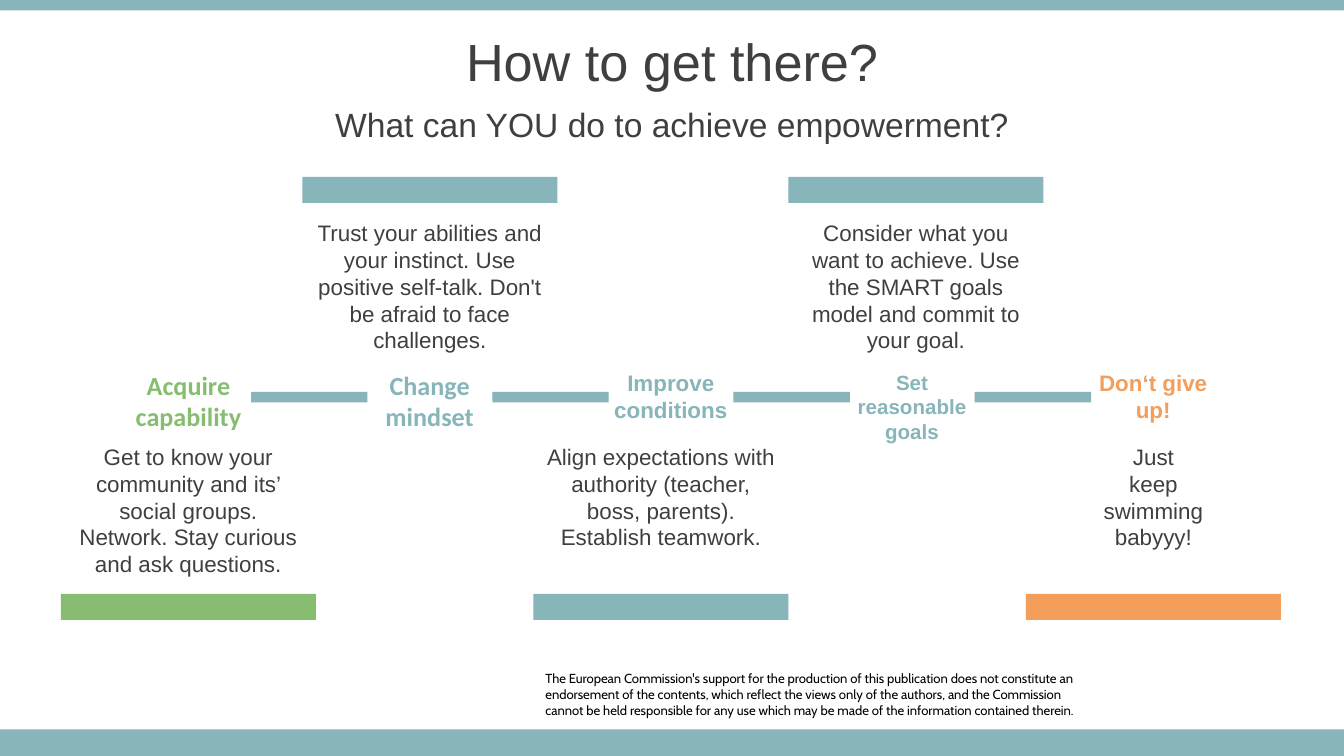
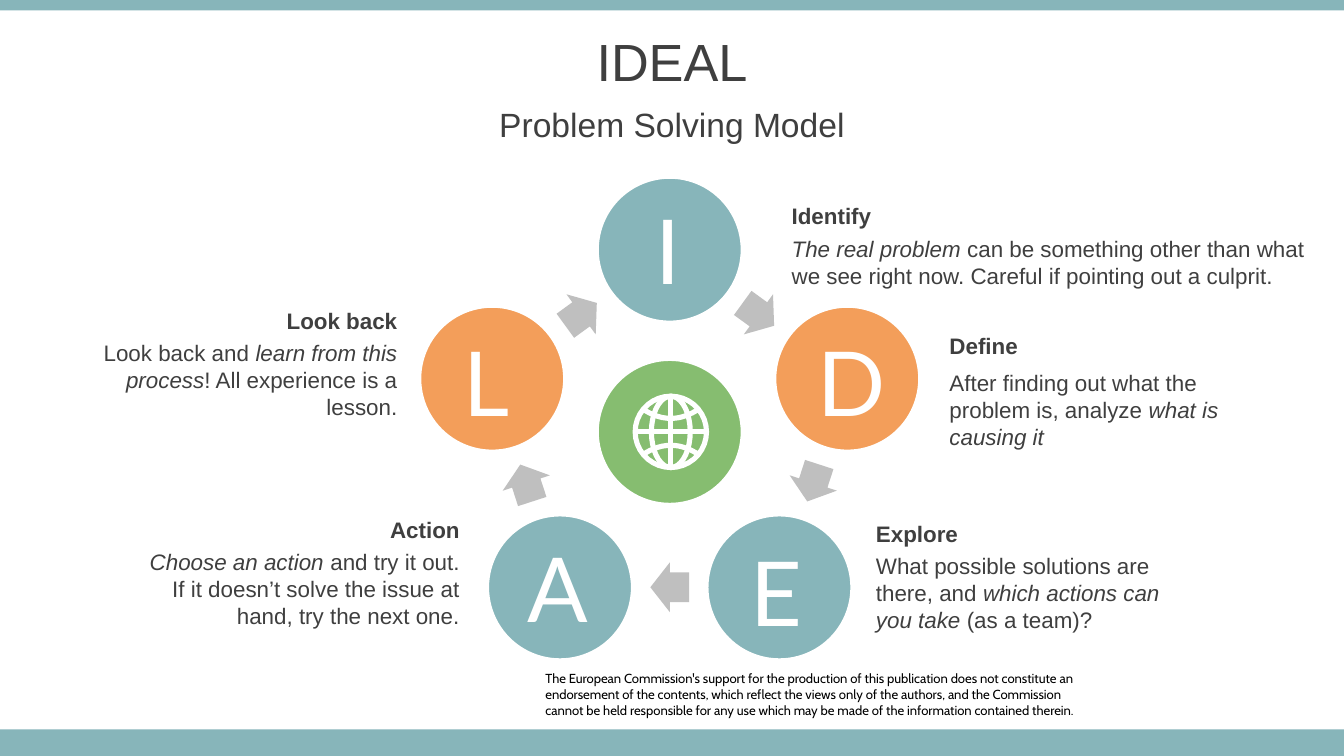
import math

from pptx import Presentation
from pptx.dml.color import RGBColor
from pptx.enum import shapes, text
from pptx.util import Pt

COLORS = {"teal": "87B5BA", "green": "86BD70", "orange": "F39E5A",
          "ink": "3F3F3F", "gray": "BFBFBF", "white": "FFFFFF", "black": "000000"}
WIDTH, HEIGHT = 720, 405
LEFT, CENTER, RIGHT = text.PP_ALIGN.LEFT, text.PP_ALIGN.CENTER, text.PP_ALIGN.RIGHT
RECT, OVAL, ARROW = (shapes.MSO_SHAPE.RECTANGLE, shapes.MSO_SHAPE.OVAL,
                     shapes.MSO_SHAPE.RIGHT_ARROW)

DISCLAIMER = [
    "The European Commission's support for the production of this publication does not "
    "constitute an endorsement of the contents, which reflect the views only of the "
    "authors, and the Commission",
    "cannot be held responsible for any use which may be made of the information "
    "contained therein.",
]


def rgb(color):
    return RGBColor.from_string(COLORS[color])


class Deck:
    """Holds the shared style and the slide being filled."""

    def __init__(self):
        self.prs = Presentation()
        self.prs.slide_width, self.prs.slide_height = Pt(WIDTH), Pt(HEIGHT)
        self.layout = self.prs.slide_layouts[5]
        self.slide = None

    def new_slide(self, title, subtitle):
        first = self.slide is None
        self.slide = self.prs.slides.add_slide(self.layout)
        if first:
            self.add_frame()
        heading = self.slide.shapes.title
        heading.left, heading.top = Pt(0), Pt(10)
        heading.width, heading.height = Pt(WIDTH), Pt(45.4)
        self.set_text(heading.text_frame, [title], 28, align=CENTER, middle=True)
        self.label((0, 55.4, WIDTH, 22.3), [subtitle], 18, align=CENTER, middle=True)

    def add_frame(self):
        """Put the bands and the disclaimer on the layout, behind every slide."""
        frame = [
            self.label((292.2, 359.4, 300.4, 25.2), DISCLAIMER, 7, "black", "Cabin", inset=0),
            self.shape(RECT, (0, 390.8, WIDTH, HEIGHT - 390.8), "teal"),
            self.shape(RECT, (0, 0, WIDTH, 5.6), "teal"),
        ]
        for number, part in enumerate(frame, 100):
            part.element.xpath(".//p:cNvPr")[0].set("id", str(number))
            self.layout.shapes.element.append(part.element)

    def set_text(self, frame, lines, size, color="ink", font="Arial", align=LEFT,
                 bold=False, inset=None, middle=False):
        """Fill a text frame, one paragraph a line; underscores enclose italics."""
        frame.word_wrap = True
        frame.auto_size = (text.MSO_AUTO_SIZE.NONE if middle
                           else text.MSO_AUTO_SIZE.SHAPE_TO_FIT_TEXT)
        frame.vertical_anchor = text.MSO_ANCHOR.MIDDLE if middle else text.MSO_ANCHOR.TOP
        across, down = (7.2, 3.6) if inset is None else (inset, inset)
        frame.margin_left = frame.margin_right = Pt(across)
        frame.margin_top = frame.margin_bottom = Pt(down)
        for index, line in enumerate(lines):
            paragraph = frame.add_paragraph() if index else frame.paragraphs[0]
            paragraph.alignment = align
            for part, words in enumerate(line.split("_")):
                if words:
                    run = paragraph.add_run()
                    run.text = words
                    run.font.size, run.font.name = Pt(size), font
                    run.font.bold, run.font.italic = bold, part % 2 == 1
                    run.font.color.rgb = rgb(color)

    def label(self, box, lines, size, *args, **style):
        holder = self.slide.shapes.add_textbox(*map(Pt, box))
        self.set_text(holder.text_frame, lines, size, *args, **style)
        return holder

    def shape(self, kind, box, fill, outline=None):
        item = self.slide.shapes.add_shape(kind, *map(Pt, box))
        item.shadow.inherit = False
        item.fill.solid()
        item.fill.fore_color.rgb = rgb(fill)
        if outline:
            item.line.color.rgb = rgb(outline)
            item.line.width = Pt(2)
        else:
            item.line.fill.background()
        return item

    def disc(self, x, y, fill):
        size = 78
        self.shape(OVAL, (x - size / 2, y - size / 2, size, size), fill, "white")

    def arrow(self, x, y, angle):
        width, height = 20.8, 26.6
        arrow = self.shape(ARROW, (x - width / 2, y - height / 2, width, height), "gray")
        arrow.adjustments[0], arrow.adjustments[1] = 0.6, 0.5
        arrow.rotation = angle

    def strokes(self, curves, color, weight):
        """Draw several open or closed curves as one outline."""
        points = [[(Pt(x), Pt(y)) for x, y in curve] for curve in curves]
        builder = self.slide.shapes.build_freeform(*points[0][0])
        builder.add_line_segments(points[0][1:], close=False)
        for curve in points[1:]:
            builder.move_to(*curve[0])
            builder.add_line_segments(curve[1:], close=False)
        item = builder.convert_to_shape()
        item.shadow.inherit = False
        item.fill.background()
        item.line.color.rgb = rgb(color)
        item.line.width = Pt(weight)


def steps_slide(deck):
    deck.new_slide("How to get there?", "What can YOU do to achieve empowerment?")
    # name, font, size, name box width, color, detail left, detail is above, detail
    steps = [
        (["Acquire", "capability"], "Calibri", 14, 73, "green", 32.6, False,
         ["Get to know your community and its’ social groups. Network. "
          "Stay curious and ask questions."]),
        (["Change", "mindset"], "Calibri", 14, 73, "teal", 162, True,
         ["Trust your abilities and your instinct. Use",
          "positive self-talk. Don't be afraid to face", "challenges."]),
        (["Improve conditions"], "Arial", 12, 92, "teal", 285.8, False,
         ["Align expectations with authority (teacher,", "boss, parents).",
          "Establish teamwork."]),
        (["Set reasonable goals"], "Arial", 11, 73, "teal", 422.4, True,
         ["Consider what you", "want to achieve. Use", "the SMART goals",
          "model and commit to", "your goal."]),
        (["Don‘t give up!"], "Arial", 12, 73, "orange", 549.6, False,
         ["Just", "keep", "swimming", "babyyy!"]),
    ]
    pitch, detail_width = 129.2, 136.6
    for index, (name, font, size, width, color, left, above, detail) in enumerate(steps):
        middle = 101 + index * pitch
        deck.label((middle - width / 2, 194.4, width, 40), name, size, color, font,
                   CENTER, bold=True)
        if index < len(steps) - 1:
            deck.shape(RECT, (134.5 + index * pitch, 210, 62.4, 5.6), "teal")
        detail_top, bar_top = (113.8, 94.8) if above else (233.8, 318.2)
        deck.label((left, detail_top, detail_width, 80), detail, 12, align=CENTER)
        deck.shape(RECT, (left, bar_top, detail_width, 14), color)


def globe(deck, x, y):
    radius, turn = 19.1, [math.radians(10 * step) for step in range(37)]
    meridians = [[(x + rx * math.cos(a), y + radius * math.sin(a)) for a in turn]
                 for rx in (radius, 10.4)]
    axes = [[(x - radius, y), (x + radius, y)], [(x, y - radius), (x, y + radius)]]
    parallels = [[(x + 13.9 * t / 6, y + side * (7.2 + 4.3 * (t / 6) ** 2))
                  for t in range(-6, 7)] for side in (-1, 1)]
    deck.strokes(meridians + axes + parallels, "white", 2.75)


def ideal_slide(deck):
    deck.new_slide("IDEAL", "Problem Solving Model")
    hub_x, hub_y = 358.8, 233.8

    def around(radius, angle):
        """Point at a clockwise angle from the top of the ring."""
        turn = math.radians(angle)
        return hub_x + radius * math.sin(turn), hub_y - radius * math.cos(turn)

    # letter, offset from the disc centre, color, name, align, left, tops, width, detail
    stages = [
        ("I", (-14.6, -33), "teal", "Identify", LEFT, 417, (105, 122.4), 294.5,
         "_The real problem _can be something other than what we see right now. "
         "Careful if pointing out a culprit."),
        ("D", (-22.8, -31.4), "orange", "Define", LEFT, 501.6, (174.2, 194.2), 183,
         "After finding out what the problem is, analyze _what is causing it_"),
        ("E", (-22.4, -30.6), "teal", "Explore", LEFT, 462.2, (275, 292.2), 183,
         "What possible solutions are there, and _which actions can you take _(as a team)?"),
        ("A", (-24.4, -32.6), "teal", "Action", RIGHT, 70.4, (272.8, 290.2), 183,
         "_Choose an action _and try it out. If it doesn’t solve the issue at hand, "
         "try the next one."),
        ("L", (-22.6, -31.4), "orange", "Look back", RIGHT, 37, (161.2, 178.2), 183,
         "Look back and_ learn from this process_! All experience is a lesson."),
    ]
    for index, (letter, (dx, dy), color, name, align, left, tops, width,
                detail) in enumerate(stages):
        angle = index * 360 / len(stages)
        x, y = around(100, angle)
        deck.disc(x, y, color)
        deck.label((x + dx, y + dy, 49, 65.4), [letter], 48, "white", "Lato")
        deck.arrow(*around(80.8, angle + 36), angle + 36)
        deck.label((left, tops[0], width, 21.8), [name], 12, align=align, bold=True)
        deck.label((left, tops[1], width, 51), [detail], 12, align=align)
    deck.disc(hub_x, 231.4, "green")
    globe(deck, 359.4, 231.4)


def main():
    deck = Deck()
    steps_slide(deck)
    ideal_slide(deck)
    deck.prs.save("out.pptx")


if __name__ == "__main__":
    main()
